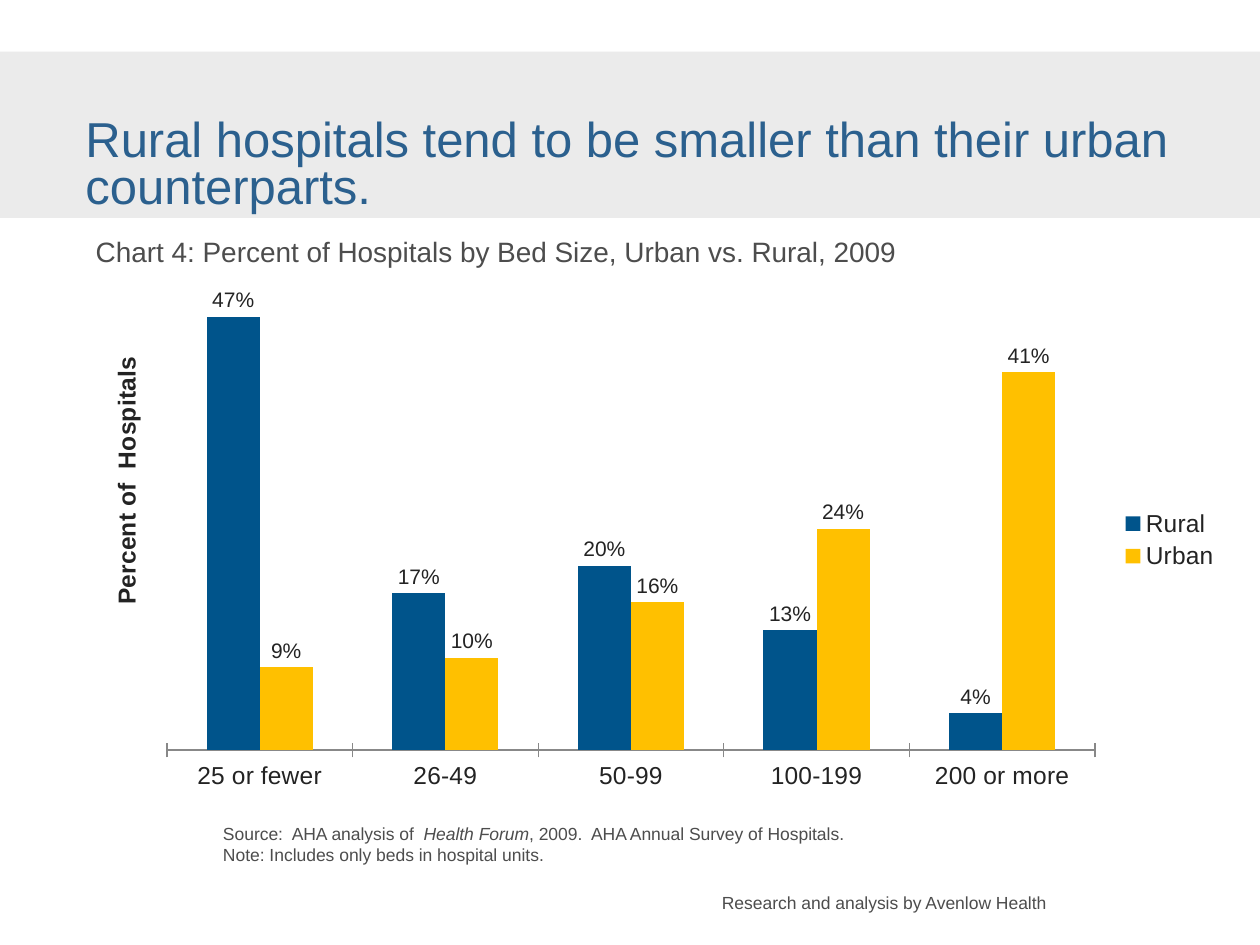
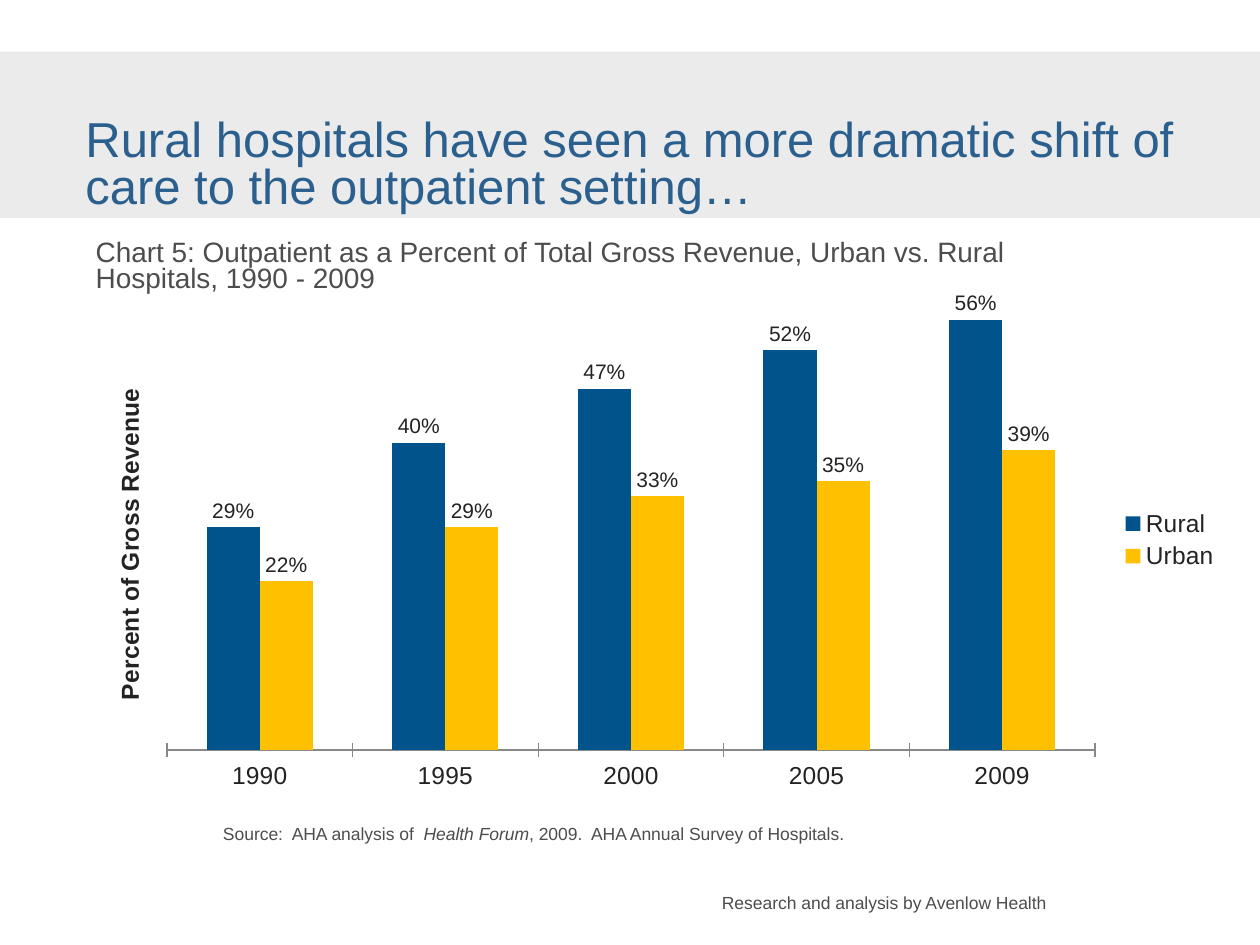
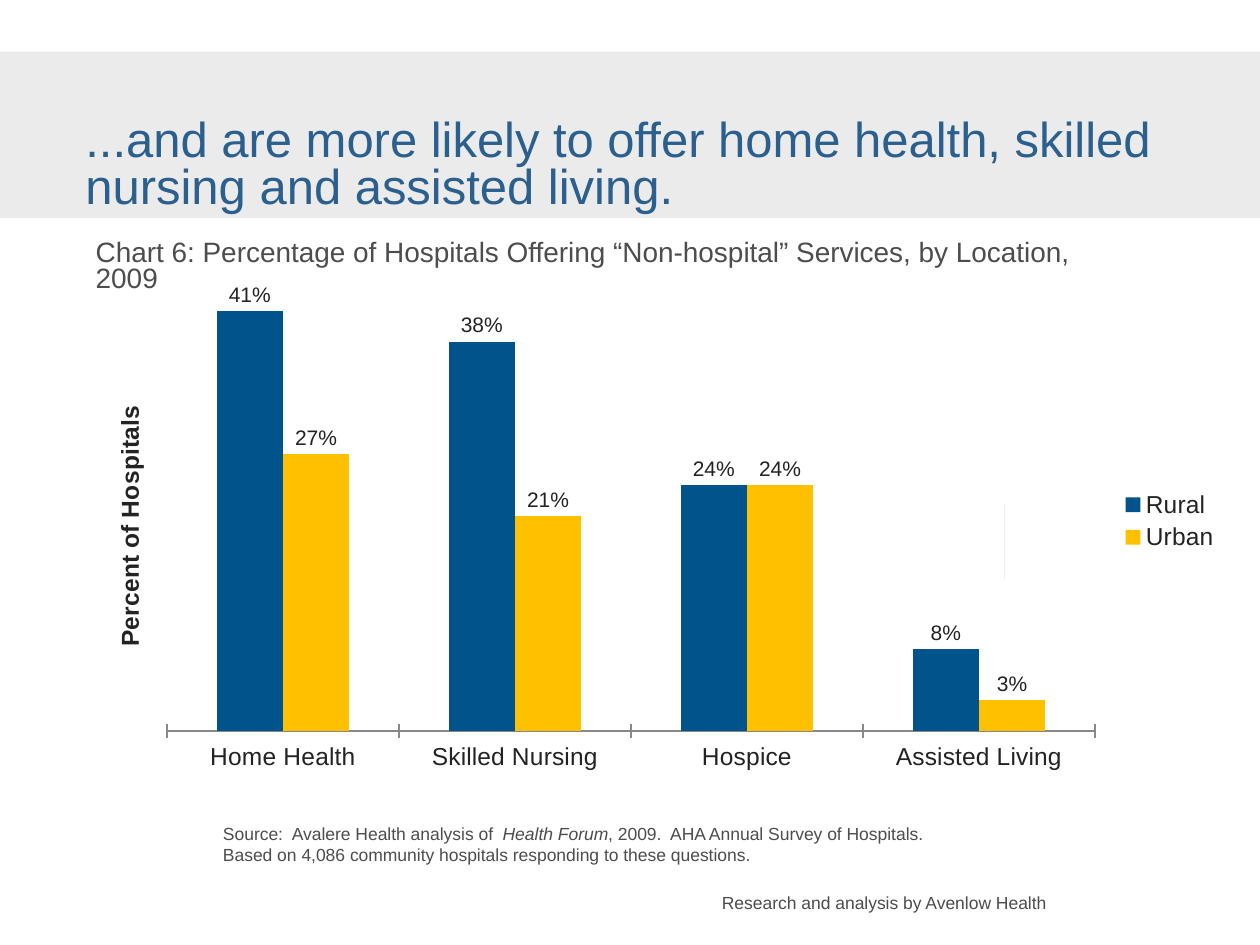
from dataclasses import dataclass

from lxml import etree
from pptx import Presentation
from pptx.chart import data
from pptx.dml.color import RGBColor
from pptx.enum import chart as ch, shapes, text
from pptx.oxml import ns
from pptx import util as u


@dataclass(frozen=True)
class Theme:
    font: str = "Arial"
    band: str = "EBEBEB"
    heading: str = "2B608E"
    body: str = "4D4D4D"
    chart_text: str = "232323"
    axis: str = "888888"
    marker: str = "799D34"
    series: tuple = ("00548B", "FFC000")
    heading_size: int = 28
    caption_size: int = 16
    axis_size: int = 14
    label_size: int = 12
    note_size: int = 10


COLUMNS, ROWS = 100, 75
FOOTER = "Research and analysis by Avenlow Health"
SURVEY = [("Health Forum", True), (", 2009.  AHA Annual Survey of Hospitals.", False)]
AHA_SOURCE = [("Source:  AHA analysis of  ", False), *SURVEY]


def set_layout(parent, index, **shares):
    layout = parent.find(ns.qn("c:layout"))
    if layout is None:
        layout = etree.Element(ns.qn("c:layout"))
        parent.insert(index, layout)
    manual = etree.SubElement(layout, ns.qn("c:manualLayout"))
    if "w" in shares:
        etree.SubElement(manual, ns.qn("c:layoutTarget"), val="inner")
    for key in ("x", "y"):
        etree.SubElement(manual, ns.qn(f"c:{key}Mode"), val="edge")
    for key, share in shares.items():
        etree.SubElement(manual, ns.qn(f"c:{key}"), val=str(share))


class Deck:
    def __init__(self, theme):
        self.theme = theme
        self.prs = Presentation()
        self.prs.slide_width, self.prs.slide_height = u.Inches(10), u.Inches(7.5)
        self.slide = None

    def place(self, col, row, cols, rows):
        w, h = self.prs.slide_width / COLUMNS, self.prs.slide_height / ROWS
        return [round(v) for v in (col * w, row * h, cols * w, rows * h)]

    def style(self, font, size, color, bold=None):
        font.name, font.size, font.bold = self.theme.font, u.Pt(size), bold
        font.color.rgb = RGBColor.from_string(color)

    def add_slide(self):
        self.slide = self.prs.slides.add_slide(self.prs.slide_layouts[6])
        self.rect((0, 4.1, COLUMNS, 13.2), self.theme.band)
        self.note((57.3, 70.8, 26.4, 1.7), [[(FOOTER, False)]])

    def rect(self, box, color):
        sp = self.slide.shapes.add_shape(shapes.MSO_SHAPE.RECTANGLE, *self.place(*box))
        sp.shadow.inherit = False
        sp.fill.solid()
        sp.fill.fore_color.rgb = RGBColor.from_string(color)
        sp.line.fill.background()

    def text(self, box, paragraphs, size, color, spacing=None, inset=True):
        tf = self.slide.shapes.add_textbox(*self.place(*box)).text_frame
        tf.word_wrap = True
        if not inset:
            tf.margin_left = tf.margin_right = tf.margin_top = tf.margin_bottom = 0
            tf.auto_size = text.MSO_AUTO_SIZE.SHAPE_TO_FIT_TEXT
        for i, runs in enumerate(paragraphs):
            p = tf.add_paragraph() if i else tf.paragraphs[0]
            p.line_spacing = spacing
            self.style(p.font, size, color)
            for wording, italic in runs:
                r = p.add_run()
                r.text = wording
                if italic:
                    r.font.italic = True

    def heading(self, wording):
        self.text((5.8, 9, 90, 7.5), [[(wording, False)]],
                  self.theme.heading_size, self.theme.heading, 0.8)

    def caption(self, wording, rows):
        self.text((7.6, 19.1, 81.6, rows), [[(wording, False)]],
                  self.theme.caption_size, self.theme.body, 0.8, False)

    def note(self, box, paragraphs):
        self.text(box, paragraphs, self.theme.note_size, self.theme.body, inset=False)

    def chart(self, row, categories, rural, urban, top, axis_title, title_at):
        t = self.theme
        cd = data.CategoryChartData(number_format="0%")
        cd.categories = categories
        cd.add_series("Rural", rural)
        cd.add_series("Urban", urban)
        chart = self.slide.shapes.add_chart(
            ch.XL_CHART_TYPE.COLUMN_CLUSTERED, *self.place(6.3, row, 91.5, 41.3), cd).chart
        self.style(chart.font, 18, t.chart_text)
        chart.has_title = False
        chart.has_legend = True
        chart.legend.position = ch.XL_LEGEND_POSITION.RIGHT
        chart.legend.include_in_layout = False
        self.style(chart.legend.font, t.axis_size, t.chart_text)

        cat = chart.category_axis
        cat.major_tick_mark = ch.XL_TICK_MARK.CROSS
        cat.format.line.color.rgb = RGBColor.from_string(t.axis)
        self.style(cat.tick_labels.font, t.axis_size, t.chart_text)

        val = chart.value_axis
        val.minimum_scale, val.maximum_scale = 0, top
        val.has_major_gridlines = False
        val.tick_labels.number_format = "0%"
        val.tick_labels.number_format_is_linked = False
        title = val.axis_title
        p = title.text_frame.paragraphs[0]
        r = p.add_run()
        r.text = axis_title
        self.style(r.font, t.axis_size, t.chart_text, True)
        set_layout(title.element, 1, x=title_at[0], y=title_at[1])
        val.visible = False

        plot = chart.plots[0]
        plot.vary_by_categories = False
        plot.gap_width, plot.overlap = 150, 0
        for series, color in zip(plot.series, t.series):
            series.format.fill.solid()
            series.format.fill.fore_color.rgb = RGBColor.from_string(color)
            labels = series.data_labels
            labels.show_value = True
            labels.number_format = "0%"
            labels.number_format_is_linked = False
            labels.position = ch.XL_LABEL_POSITION.OUTSIDE_END
            self.style(labels.font, t.label_size, t.chart_text)
        set_layout(chart.element.find(".//" + ns.qn("c:plotArea")), 0,
                   x=0.076, y=0.018, w=0.805, h=0.886)

    def chart_slide(self, heading, caption, caption_rows, source, chart):
        self.add_slide()
        self.caption(caption, caption_rows)
        self.note((17.7, 65.3, 66, 1.7 * len(source)), source)
        self.heading(heading)
        self.rect((79.7, 40, 0, 6), self.theme.marker)
        self.chart(**chart)


def main():
    deck = Deck(Theme())
    deck.chart_slide(
        "Rural hospitals tend to be smaller than their urban counterparts.",
        "Chart 4: Percent of Hospitals by Bed Size, Urban vs. Rural, 2009", 2.2,
        [AHA_SOURCE, [("Note: Includes only beds in hospital units.", False)]],
        dict(row=22.2, top=0.5, axis_title="Percent of  Hospitals", title_at=(0.023, 0.14),
             categories=["25 or fewer", "26-49", "50-99", "100-199", "200 or more"],
             rural=[0.47, 0.17, 0.2, 0.13, 0.04], urban=[0.09, 0.1, 0.16, 0.24, 0.41]))
    deck.chart_slide(
        "Rural hospitals have seen a more dramatic shift of care to the outpatient setting…",
        "Chart 5: Outpatient as a Percent of Total Gross Revenue, "
        "Urban vs. Rural Hospitals, 1990 - 2009", 4.3,
        [AHA_SOURCE],
        dict(row=22.2, top=0.6, axis_title="Percent of Gross Revenue", title_at=(0.026, 0.2),
             categories=["1990", "1995", "2000", "2005", "2009"],
             rural=[0.29, 0.4, 0.47, 0.52, 0.56], urban=[0.22, 0.29, 0.33, 0.35, 0.39]))
    deck.chart_slide(
        "...and are more likely to offer home health, skilled nursing and assisted living.",
        "Chart 6: Percentage of Hospitals Offering “Non-hospital” Services, by Location, 2009", 4.3,
        [[("Source:  Avalere Health analysis of  ", False), *SURVEY],
         [("Based on 4,086 community hospitals responding to these questions.", False)]],
        dict(row=20.7, top=0.45, axis_title="Percent of Hospitals", title_at=(0.026, 0.27),
             categories=["Home Health", "Skilled Nursing", "Hospice", "Assisted Living"],
             rural=[0.41, 0.38, 0.24, 0.08], urban=[0.27, 0.21, 0.24, 0.03]))
    deck.prs.save("out.pptx")


if __name__ == "__main__":
    main()
